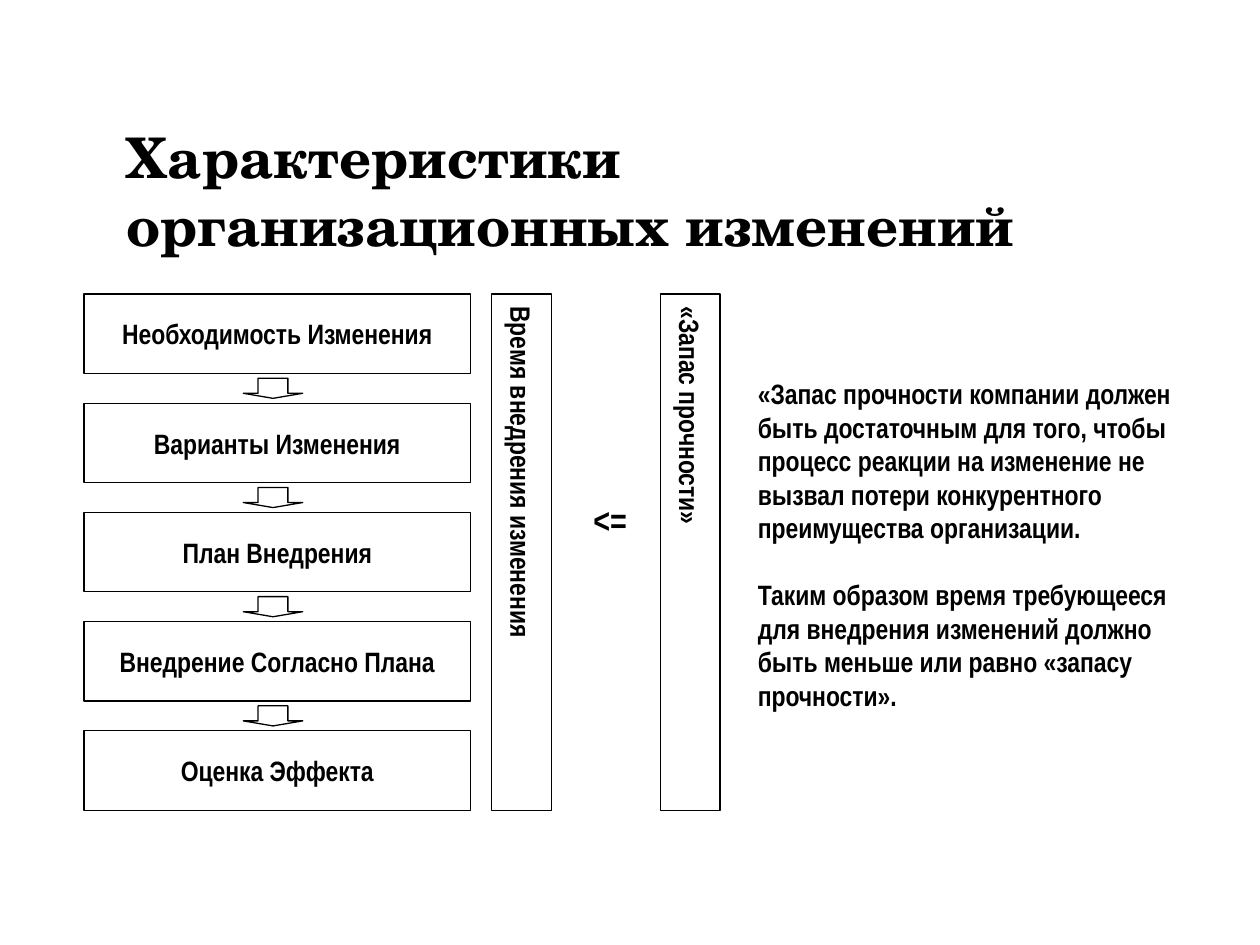
import pptx
import pptx.util
import pptx.dml.color
import pptx.enum.shapes
import pptx.enum.text

Pt = pptx.util.Pt
SHAPE = pptx.enum.shapes.MSO_SHAPE
ALIGN = pptx.enum.text.PP_ALIGN
ANCHOR = pptx.enum.text.MSO_ANCHOR
AUTO = pptx.enum.text.MSO_AUTO_SIZE

TITLE = "Характеристики организационных изменений"
STEPS = [
    "Необходимость Изменения",
    "Варианты Изменения",
    "План Внедрения",
    "Внедрение Согласно Плана",
    "Оценка Эффекта",
]
BARS = [("Время внедрения изменения", 281), ("«Запас прочности»", 377.5)]
SIGN = "<="
NOTES = [
    "«Запас прочности компании должен быть достаточным для того, чтобы процесс "
    "реакции на изменение не вызвал потери конкурентного преимущества организации.",
    "Таким образом время требующееся для внедрения изменений должно быть меньше "
    "или равно «запасу прочности».",
]

COLORS = {"text": "000000", "line": "000000", "fill": "FFFFFF"}
BODY_FONT, TITLE_FONT = "Arial Narrow", "TeX Gyre Schola"

TOP, LEFT = 168, 48
STEP_W, STEP_H, PITCH = 221, 45.4, 62.4
ARROW_W, ARROW_H = 34, 11.5
BAR_W = 34


def rgb(name):
    return pptx.dml.color.RGBColor.from_string(COLORS[name])


def write(sp, *texts, font=BODY_FONT, size=16, align=ALIGN.LEFT,
          anchor=ANCHOR.TOP, wrap=True, fit=AUTO.NONE, gap=0):
    """Fill a shape with bold paragraphs, gap points apart."""
    tf = sp.text_frame
    tf.auto_size, tf.word_wrap, tf.vertical_anchor = fit, wrap, anchor
    for i, text in enumerate(texts):
        p = tf.add_paragraph() if i else tf.paragraphs[0]
        p.alignment = align
        p.space_before = Pt(gap if i else 0)
        r = p.add_run()
        r.text = text
        r.font.name, r.font.size, r.font.bold = font, Pt(size), True
        r.font.color.rgb = rgb("text")


def outlined(s, kind, x, y, w, h):
    sp = s.shapes.add_shape(kind, Pt(x), Pt(y), Pt(w), Pt(h))
    sp.shadow.inherit = False
    sp.fill.solid()
    sp.fill.fore_color.rgb = rgb("fill")
    sp.line.color.rgb = rgb("line")
    sp.line.width = Pt(0.75)
    return sp


def box(s, text, x, y, w, h):
    sp = outlined(s, SHAPE.RECTANGLE, x, y, w, h)
    write(sp, text, align=ALIGN.CENTER, anchor=ANCHOR.MIDDLE, wrap=False)
    return sp


def main():
    prs = pptx.Presentation()
    prs.slide_width, prs.slide_height = Pt(720), Pt(540)
    s = prs.slides.add_slide(prs.slide_layouts[5])

    title = s.shapes.title
    title.left, title.top, title.width, title.height = Pt(65), Pt(54.7), Pt(610), Pt(96)
    write(title, TITLE, font=TITLE_FONT, size=32, anchor=ANCHOR.BOTTOM)

    for i, step in enumerate(STEPS):
        box(s, step, LEFT, TOP + i * PITCH, STEP_W, STEP_H)
    arrow_x = LEFT + (STEP_W - ARROW_W) / 2 - 2.5
    arrow_y = TOP + STEP_H + (PITCH - STEP_H - ARROW_H) / 2
    for i in range(len(STEPS) - 1):
        arrow = outlined(s, SHAPE.DOWN_ARROW, arrow_x, arrow_y + i * PITCH, ARROW_W, ARROW_H)
        arrow.adjustments[0], arrow.adjustments[1] = 0.5, 0.25

    bar_h = (len(STEPS) - 1) * PITCH + STEP_H
    for text, x in BARS:
        bar = box(s, text, x, TOP, BAR_W, bar_h)
        bar.element.txBody.bodyPr.set("vert", "eaVert")

    sign = s.shapes.add_textbox(Pt(332), Pt(281.5), Pt(39.6), Pt(31))
    write(sign, SIGN, size=20, fit=AUTO.SHAPE_TO_FIT_TEXT)
    notes = s.shapes.add_textbox(Pt(426), Pt(211.7), Pt(268), Pt(199.4))
    write(notes, *NOTES, fit=AUTO.SHAPE_TO_FIT_TEXT, gap=19)

    prs.save("out.pptx")


if __name__ == "__main__":
    main()
